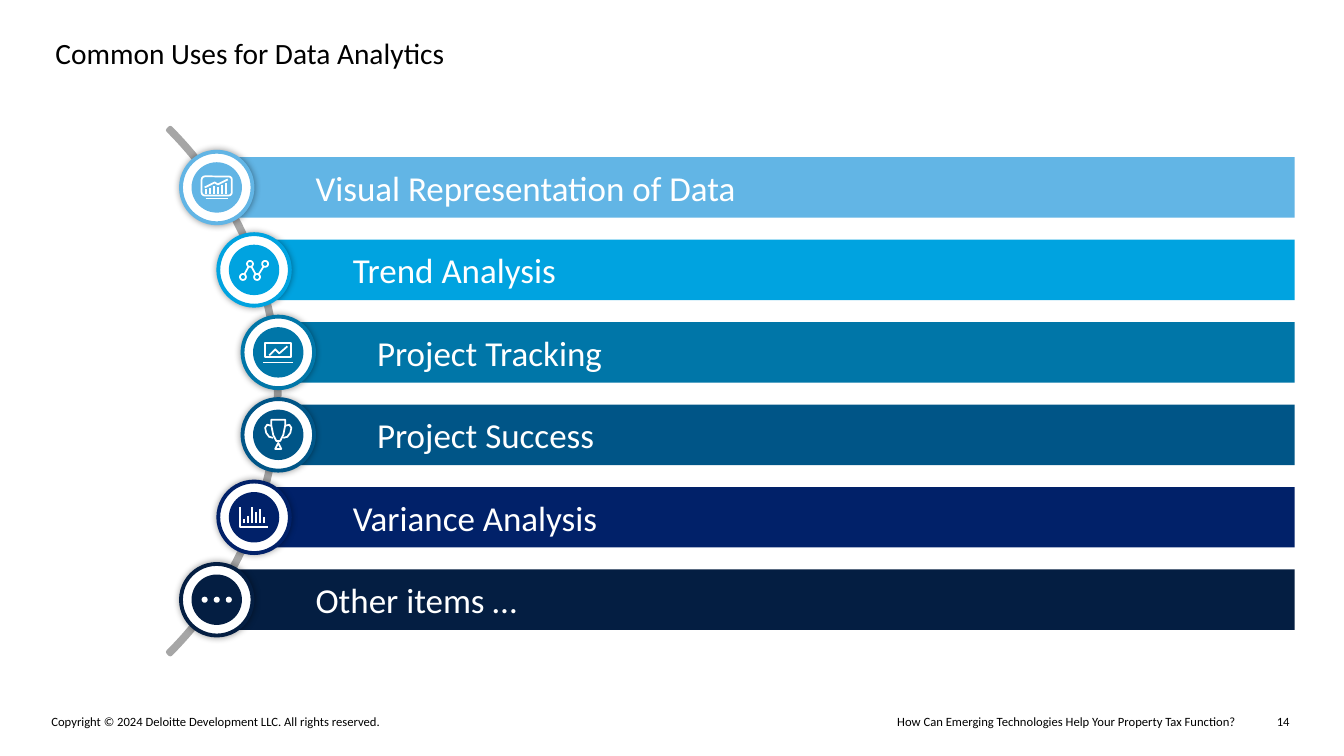
import pptx
import pptx.util
import pptx.dml.color
import pptx.enum.shapes
import pptx.enum.text
import pptx.oxml
import pptx.oxml.ns

Inches = pptx.util.Inches
Pt = pptx.util.Pt
RGBColor = pptx.dml.color.RGBColor
SHAPES = pptx.enum.shapes.MSO_SHAPE
ALIGN = pptx.enum.text.PP_ALIGN
ANCHOR = pptx.enum.text.MSO_ANCHOR

WHITE = RGBColor(0xFF, 0xFF, 0xFF)
BLACK = RGBColor(0x00, 0x00, 0x00)
GREY = RGBColor(0xA6, 0xA6, 0xA6)
SKY = RGBColor(0x62, 0xB5, 0xE5)
CYAN = RGBColor(0x00, 0xA3, 0xE0)
BLUE = RGBColor(0x00, 0x76, 0xA8)
DEEP_BLUE = RGBColor(0x00, 0x55, 0x87)
ROYAL = RGBColor(0x01, 0x21, 0x69)
NAVY = RGBColor(0x04, 0x1E, 0x42)

FONT = "Calibri"
ICON_LINE = 1.25
SOFT_SHADOW = (
    '<a:outerShdw xmlns:a="http://schemas.openxmlformats.org/drawingml/2006/main" '
    'blurRad="63500" dist="0" algn="ctr" rotWithShape="0">'
    '<a:srgbClr val="000000"><a:alpha val="40000"/></a:srgbClr></a:outerShdw>'
)


def paint(shape, fill=None, line=None, width=ICON_LINE):
    shape.shadow.inherit = False
    if fill is None:
        shape.fill.background()
    else:
        shape.fill.solid()
        shape.fill.fore_color.rgb = fill
    if line is None:
        shape.line.fill.background()
    else:
        shape.line.color.rgb = line
        shape.line.width = Pt(width)


def write(shape, text, size, colour, align=ALIGN.LEFT, anchor=ANCHOR.TOP, left_inset=0):
    frame = shape.text_frame
    frame.word_wrap = True
    frame.auto_size = pptx.enum.text.MSO_AUTO_SIZE.NONE
    frame.vertical_anchor = anchor
    frame.margin_left = Inches(left_inset)
    frame.margin_top = frame.margin_right = frame.margin_bottom = 0
    frame.text = text
    para = frame.paragraphs[0]
    para.alignment = align
    para.font.name = FONT
    para.font.size = Pt(size)
    para.font.color.rgb = colour


def add_circle(slide, x, y, radius, **style):
    circle = slide.shapes.add_shape(
        SHAPES.OVAL, Inches(x - radius), Inches(y - radius),
        Inches(2 * radius), Inches(2 * radius))
    paint(circle, **style)
    return circle


def add_stroke(slide, x, y, points, closed=False):
    """Draw a white icon line through points given relative to (x, y)."""
    corners = [(Inches(x + dx), Inches(y + dy)) for dx, dy in points]
    if len(corners) == 2:
        line = slide.shapes.add_connector(
            pptx.enum.shapes.MSO_CONNECTOR.STRAIGHT, *corners[0], *corners[1])
        line.line.color.rgb = WHITE
        line.line.width = Pt(ICON_LINE)
        line._element.spPr.append(pptx.oxml.parse_xml(
            '<a:effectLst xmlns:a="http://schemas.openxmlformats.org/drawingml/2006/main"/>'))
        return
    builder = slide.shapes.build_freeform(*corners[0])
    builder.add_line_segments(corners[1:], close=closed)
    paint(builder.convert_to_shape(), line=WHITE)


def add_columns(slide, x, y, left, tops, bottom):
    for index, top in enumerate(tops):
        dx = left + 0.04 * index
        add_stroke(slide, x, y, [(dx, top), (dx, bottom)])


def add_screen(slide, x, y, left, top, width, height, kind):
    screen = slide.shapes.add_shape(
        kind, Inches(x + left), Inches(y + top), Inches(width), Inches(height))
    paint(screen, line=WHITE)


def draw_dashboard(slide, x, y, colour):
    add_screen(slide, x, y, -0.15, -0.11, 0.3, 0.19, SHAPES.ROUNDED_RECTANGLE)
    add_stroke(slide, x, y, [(-0.11, 0.11), (0.11, 0.11)])
    add_stroke(slide, x, y, [(-0.12, 0), (-0.02, -0.05), (0.01, -0.03), (0.11, -0.08)])
    add_columns(slide, x, y, -0.11, [0.02, 0.01, -0.01, 0, -0.02, -0.04], 0.06)


def draw_trend(slide, x, y, colour):
    nodes = [(-0.11, 0.07), (-0.04, -0.06), (0.03, 0.07), (0.11, -0.06)]
    add_stroke(slide, x, y, nodes)
    for dx, dy in nodes:
        add_circle(slide, x + dx, y + dy, 0.03, fill=colour, line=WHITE)


def draw_laptop(slide, x, y, colour):
    add_screen(slide, x, y, -0.13, -0.09, 0.26, 0.14, SHAPES.RECTANGLE)
    add_stroke(slide, x, y, [(-0.15, 0.1), (0.15, 0.1)])
    add_stroke(slide, x, y, [(-0.09, 0.03), (-0.03, -0.03), (0.01, 0.01), (0.09, -0.06)])


def draw_trophy(slide, x, y, colour):
    half_cup = [(0.07, -0.15), (0.07, -0.1), (0.05, 0), (0.02, 0.06)]
    handle = [(0.07, -0.09), (0.11, -0.1), (0.13, -0.07), (0.12, -0.02),
              (0.09, 0.02), (0.05, 0.03)]
    mirrored_cup = [(-dx, dy) for dx, dy in reversed(half_cup)]
    add_stroke(slide, x, y, half_cup + mirrored_cup, closed=True)
    for side in (-1, 1):
        add_stroke(slide, x, y, [(side * dx, dy) for dx, dy in handle])
    add_stroke(slide, x, y, [(0, 0.08), (0.03, 0.14), (-0.03, 0.14)], closed=True)


def draw_column_chart(slide, x, y, colour):
    add_stroke(slide, x, y, [(-0.14, -0.1), (-0.14, 0.1), (0.14, 0.1)])
    add_columns(slide, x, y, -0.1, [0.02, -0.01, -0.1, -0.05, -0.08, 0], 0.06)


def draw_dots(slide, x, y, colour):
    for dx in (-0.12, 0, 0.12):
        add_circle(slide, x + dx, y, 0.03, fill=WHITE)


USES = [
    ("Visual Representation of Data", SKY, 2.15, draw_dashboard),
    ("Trend Analysis", CYAN, 2.52, draw_trend),
    ("Project Tracking", BLUE, 2.76, draw_laptop),
    ("Project Success", DEEP_BLUE, 2.76, draw_trophy),
    ("Variance Analysis", ROYAL, 2.52, draw_column_chart),
    ("Other items …", NAVY, 2.15, draw_dots),
]


def add_arc(slide, left, top, size):
    """Draw the thin quarter ring that faces right."""
    arc = slide.shapes.add_shape(
        SHAPES.BLOCK_ARC, Inches(left), Inches(top), Inches(size), Inches(size))
    for index, value in enumerate((189, 27, 0.004)):
        arc.adjustments[index] = value
    paint(arc, line=GREY, width=3.25)


def add_use(slide, x, y, right, text, colour, draw_icon):
    """Place a bar from a badge centred on (x, y) to the right edge."""
    height = 0.6
    bar = slide.shapes.add_shape(
        SHAPES.RECTANGLE, Inches(x), Inches(y - height / 2),
        Inches(right - x), Inches(height))
    paint(bar, fill=colour)
    write(bar, text, 25, WHITE, anchor=ANCHOR.MIDDLE, left_inset=0.98)
    badge = add_circle(slide, x, y, 0.355, fill=WHITE, line=colour, width=2.75)
    effects = badge._element.spPr.find(pptx.oxml.ns.qn("a:effectLst"))
    effects.append(pptx.oxml.parse_xml(SOFT_SHADOW))
    add_circle(slide, x, y, 0.25, fill=colour)
    draw_icon(slide, x, y, colour)


def add_uses(slide, top, bottom, right):
    pitch = (bottom - top) / (len(USES) - 1)
    for index, (text, colour, x, draw_icon) in enumerate(USES):
        add_use(slide, x, top + index * pitch, right, text, colour, draw_icon)


def add_title(slide, left, top, width, height):
    title = slide.shapes.title
    title.left, title.top = Inches(left), Inches(top)
    title.width, title.height = Inches(width), Inches(height)
    write(title, "Common Uses for Data Analytics", 21, BLACK)


def add_footer(slide, top):
    for left, width, text, align in [
        (0.51, 5.86, "Copyright © 2024 Deloitte Development LLC. All rights reserved.", ALIGN.LEFT),
        (6.93, 5.32, "How Can Emerging Technologies Help Your Property Tax Function?", ALIGN.RIGHT),
        (12.45, 0.34, "14", ALIGN.RIGHT),
    ]:
        box = slide.shapes.add_textbox(Inches(left), Inches(top), Inches(width), Inches(0.15))
        write(box, text, 9, BLACK, align)


def main():
    deck = pptx.Presentation()
    deck.slide_width, deck.slide_height = Inches(13.33), Inches(7.5)
    slide = deck.slides.add_slide(deck.slide_layouts[5])
    add_title(slide, 0.55, 0.35, 12.24, 0.37)
    add_arc(slide, -4.61, 0.19, 7.38)
    add_uses(slide, top=1.86, bottom=5.95, right=12.84)
    add_footer(slide, 7.08)
    deck.save("out.pptx")


if __name__ == "__main__":
    main()
